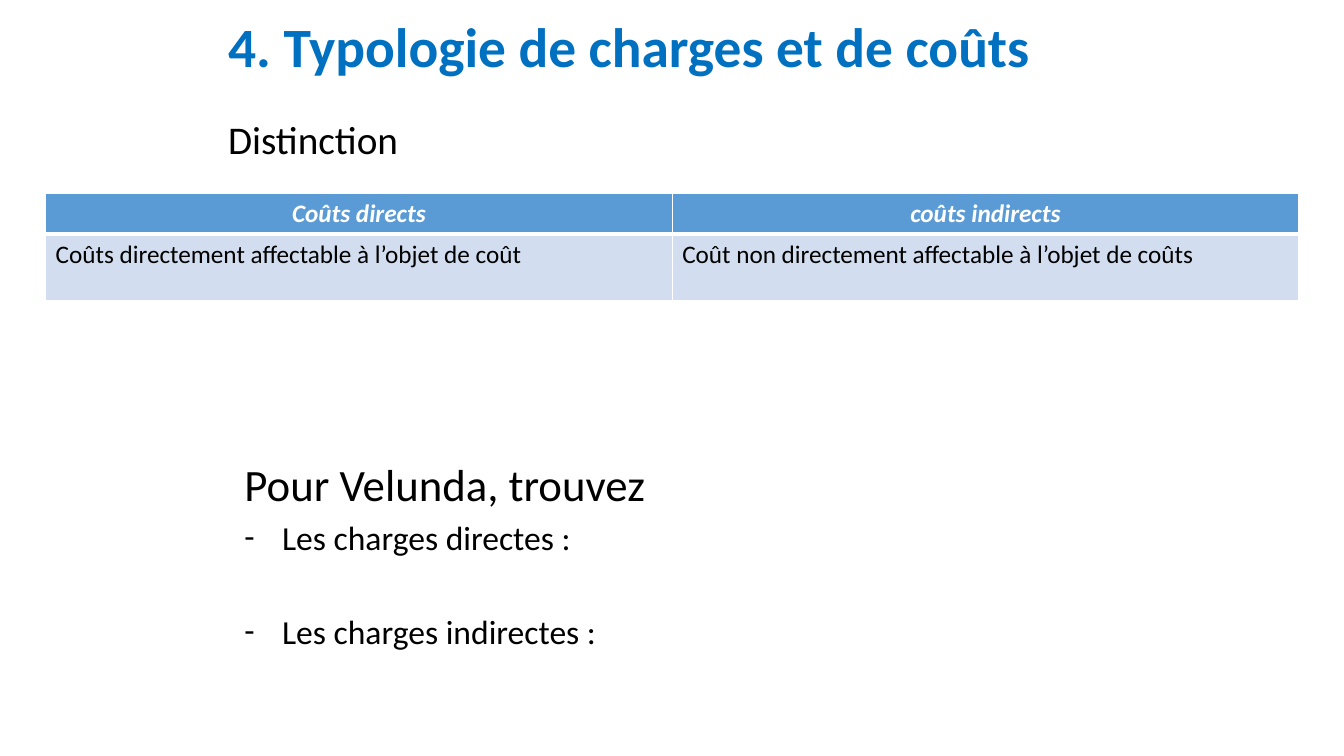
import pptx
import pptx.util
import pptx.dml.color
import pptx.enum.text
import pptx.oxml
import pptx.oxml.ns
from pptx.util import Cm, Pt

FONT = "Calibri"
BLACK, WHITE, BLUE = "000000", "FFFFFF", "0070C0"
HEADER_FILL, BODY_FILL = "5B9BD5", "D2DEEF"
ALIGN = pptx.enum.text.PP_ALIGN

# Content
TITLE = "4. Typologie de charges et de coûts"
SUBTITLE = "Distinction"
COSTS = [
    ("Coûts directs", "coûts indirects"),
    ("Coûts directement affectable à l’objet de coût",
     "Coût non directement affectable à l’objet de coûts"),
]
QUESTION = "Pour Velunda, trouvez"
TASKS = [("Les charges directes :", 4.8), ("Les charges indirectes :", 38)]

# Layout in centimetres
TEXT_LEFT, TEXT_WIDTH, BODY_HEIGHT = 5.5, 22.86, 12.57
TABLE_LEFT, TABLE_TOP, COLUMN_WIDTH = 1.15, 4.88, 15.79
ROW_HEIGHTS = (1.02, 1.67)


def color(value):
    return pptx.dml.color.RGBColor.from_string(value)


def add_box(page, left, top, height):
    box = page.shapes.add_textbox(Cm(left), Cm(top), Cm(TEXT_WIDTH), Cm(height))
    box.text_frame.word_wrap = True
    return box.text_frame


def write(para, text, size, shade=BLACK, strong=False, slanted=False):
    span = para.add_run()
    span.text = text
    span.font.name = FONT
    span.font.size = Pt(size)
    span.font.bold = strong
    span.font.italic = slanted
    span.font.color.rgb = color(shade)


def add_dash(para):
    props = para._p.get_or_add_pPr()
    props.set("marL", str(Cm(0.95)))
    props.set("indent", str(-Cm(0.95)))
    for mark in (f'buFont {pptx.oxml.ns.nsdecls("a")} typeface="{FONT}"',
                 f'buChar {pptx.oxml.ns.nsdecls("a")} char="-"'):
        props.append(pptx.oxml.parse_xml(f"<a:{mark}/>"))


def set_borders(cell, bottom):
    props = cell._tc.get_or_add_tcPr()
    widths = (("lnL", 1), ("lnR", 1), ("lnT", 1), ("lnB", bottom))
    for position, (side, width) in enumerate(widths):
        props.insert(position, pptx.oxml.parse_xml(
            f'<a:{side} {pptx.oxml.ns.nsdecls("a")} w="{Pt(width)}">'
            f'<a:solidFill><a:srgbClr val="{WHITE}"/></a:solidFill></a:{side}>'))


def add_headings(page):
    frame = add_box(page, TEXT_LEFT, 0.76, 2.36)
    frame.vertical_anchor = pptx.enum.text.MSO_ANCHOR.MIDDLE
    frame.margin_bottom = Cm(1.49)  # lifts the title in its box
    frame.paragraphs[0].line_spacing = 0.9
    write(frame.paragraphs[0], TITLE, 39.6, BLUE, strong=True)

    para = add_box(page, TEXT_LEFT, 2.92, BODY_HEIGHT).paragraphs[0]
    para.line_spacing = 0.9
    para.space_before = Pt(10)
    write(para, SUBTITLE, 28)


def add_costs(page):
    columns = len(COSTS[0])
    table = page.shapes.add_table(
        len(COSTS), columns, Cm(TABLE_LEFT), Cm(TABLE_TOP),
        Cm(COLUMN_WIDTH * columns), Cm(sum(ROW_HEIGHTS))).table
    for column in table.columns:
        column.width = Cm(COLUMN_WIDTH)
    for r, texts in enumerate(COSTS):
        header = r == 0
        table.rows[r].height = Cm(ROW_HEIGHTS[r])
        for c, text in enumerate(texts):
            cell = table.cell(r, c)
            cell.fill.solid()
            cell.fill.fore_color.rgb = color(HEADER_FILL if header else BODY_FILL)
            set_borders(cell, 3 if header else 1)
            para = cell.text_frame.paragraphs[0]
            para.alignment = ALIGN.CENTER if header else ALIGN.JUSTIFY
            write(para, text, 18, WHITE if header else BLACK, header, header)


def add_exercise(page):
    frame = add_box(page, 5.91, 11.38, BODY_HEIGHT)
    para = frame.paragraphs[0]
    para.space_before = Pt(6.4)
    write(para, QUESTION, 32)
    for text, gap in TASKS:
        para = frame.add_paragraph()
        para.space_before = Pt(gap)
        add_dash(para)
        write(para, text, 24)


def main():
    deck = pptx.Presentation()
    deck.slide_width, deck.slide_height = Cm(33.87), Cm(19.05)
    page = deck.slides.add_slide(deck.slide_layouts[6])
    add_headings(page)
    add_costs(page)
    add_exercise(page)
    deck.save("out.pptx")


if __name__ == "__main__":
    main()
